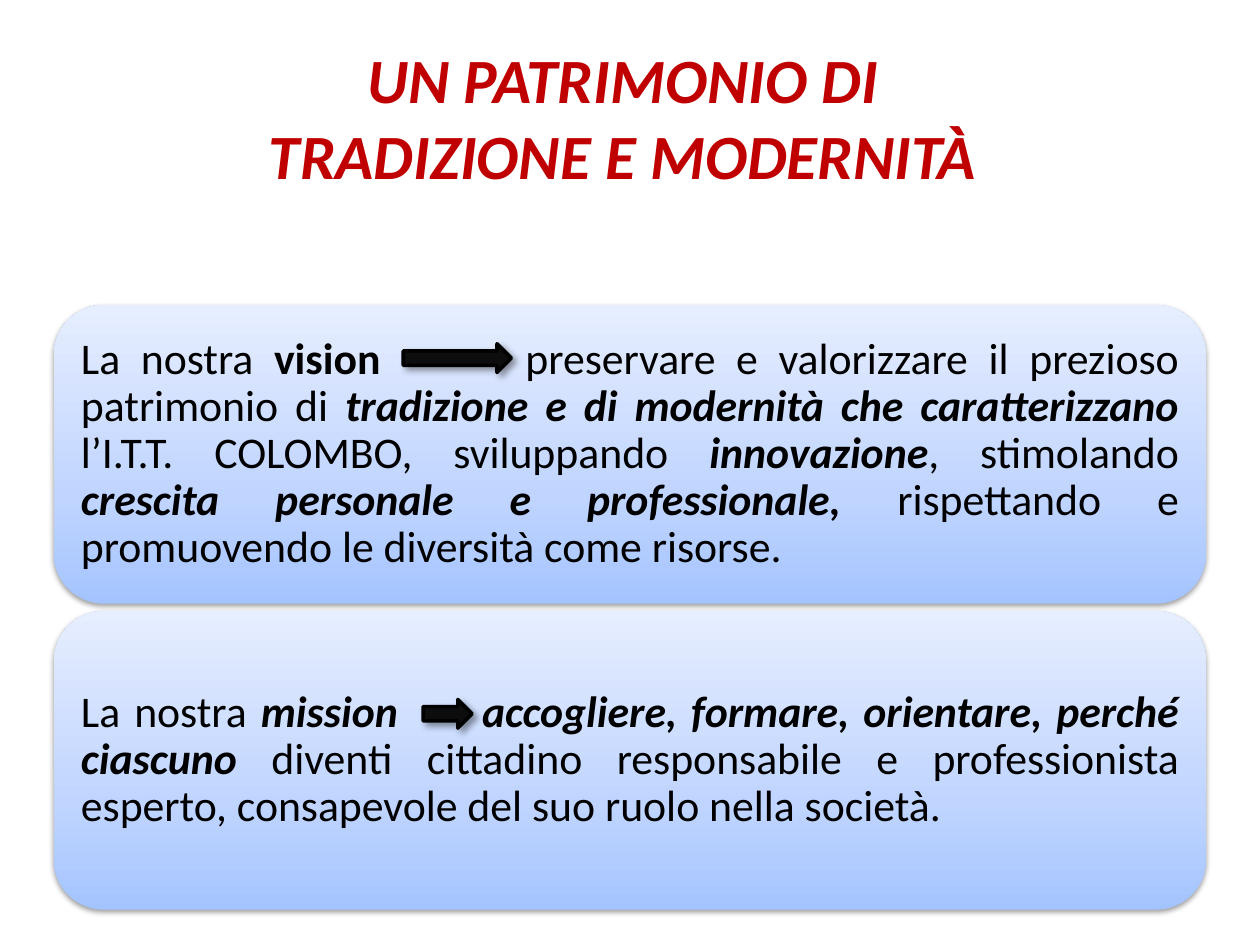
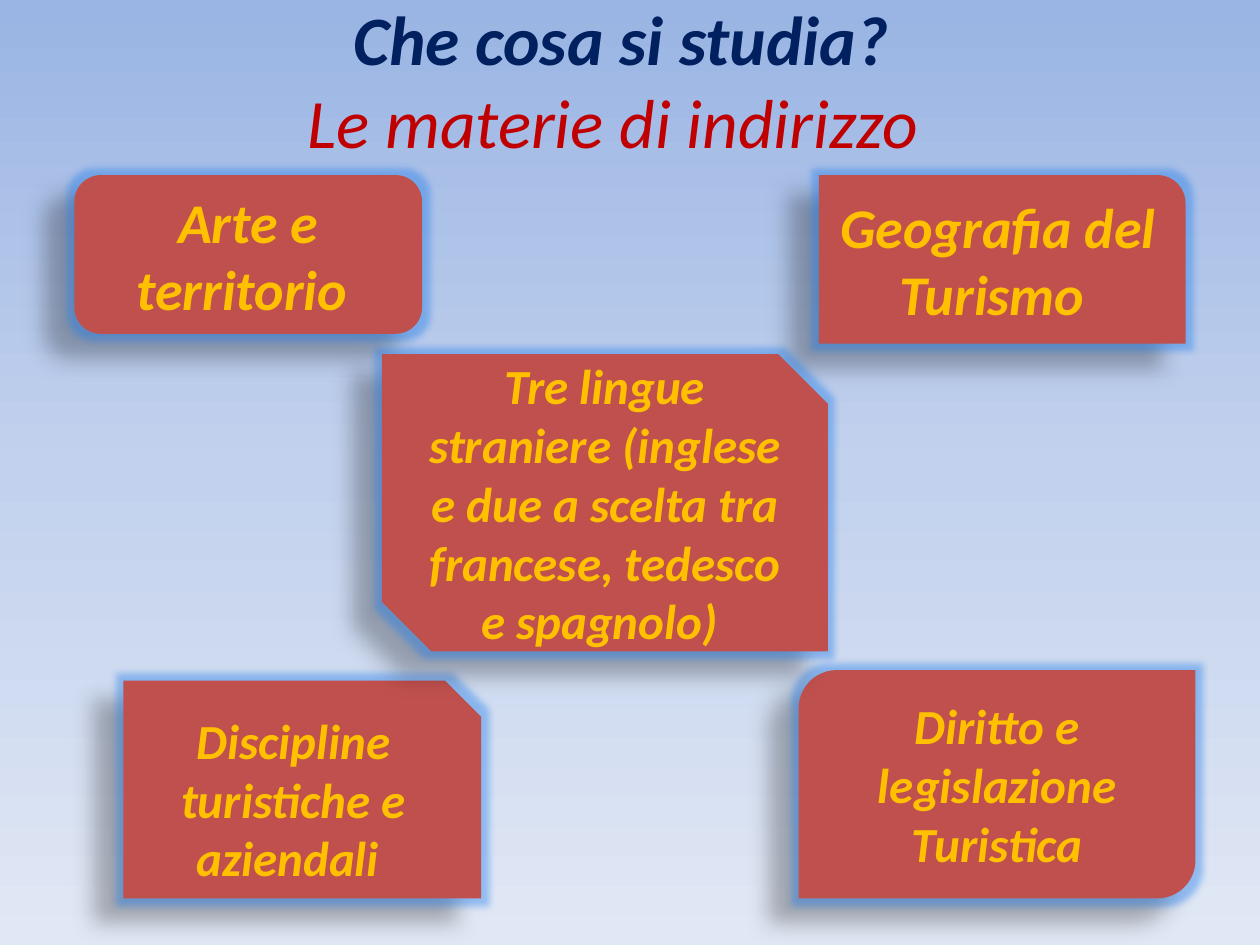
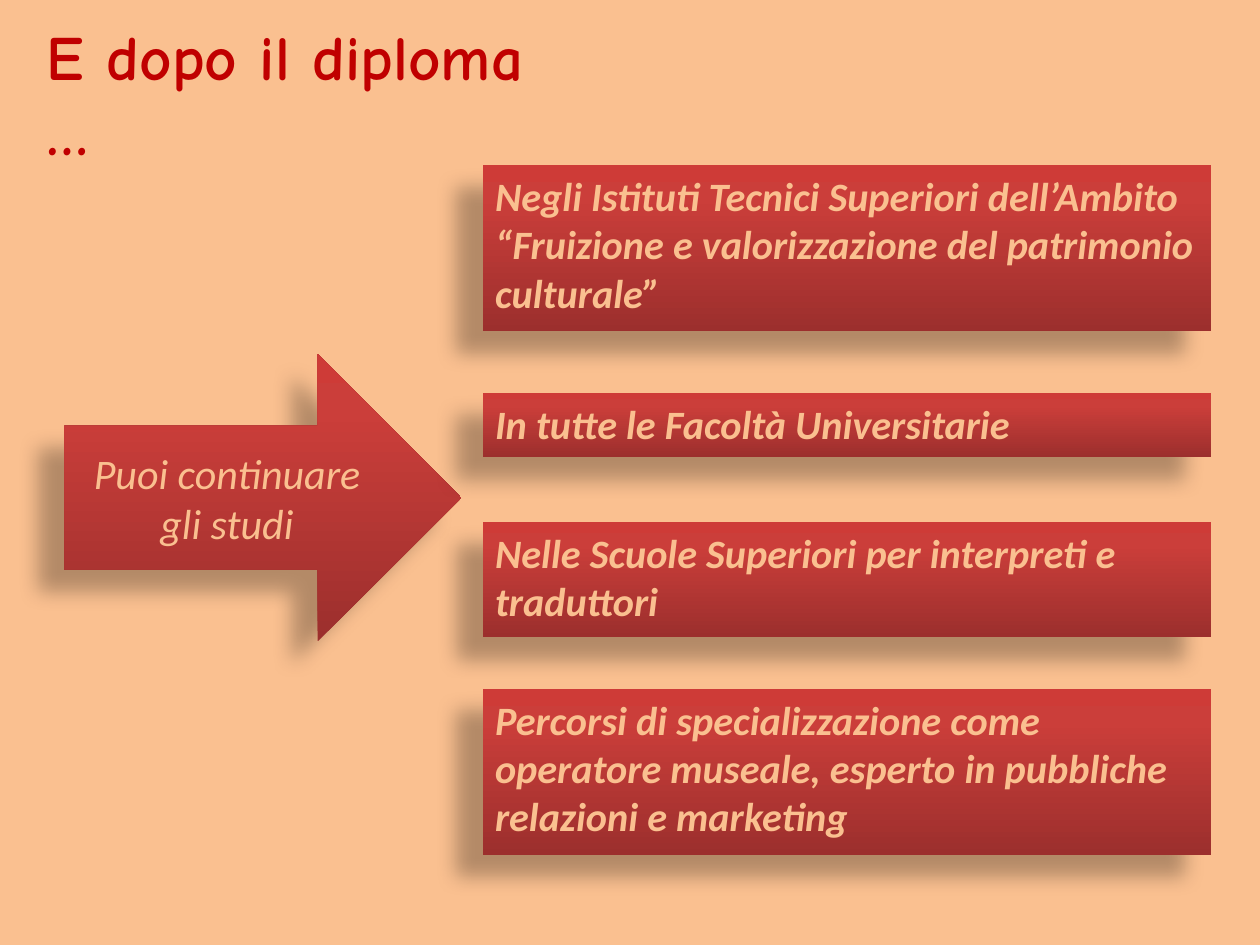
from copy import deepcopy
from lxml.etree import SubElement as Sub
from pptx import Presentation
from pptx.dml.color import RGBColor
from pptx.enum.shapes import MSO_SHAPE as Geo
from pptx.enum.text import MSO_ANCHOR as Anchor, MSO_AUTO_SIZE as Auto, PP_ALIGN as Align
from pptx.oxml.ns import qn
from pptx.util import Cm, Pt

BLACK = RGBColor(0x00, 0x00, 0x00)
INK = RGBColor(0x0D, 0x0D, 0x0D)
RED = RGBColor(0xC0, 0x00, 0x00)
NAVY = RGBColor(0x00, 0x20, 0x60)
BRICK = RGBColor(0xC0, 0x50, 0x4D)
GOLD = RGBColor(0xFF, 0xC0, 0x00)
PEACH = RGBColor(0xFA, 0xC0, 0x90)
AZURE = RGBColor(0x1F, 0x7C, 0xEB)

SKY = [(0, RGBColor(0x9A, 0xB5, 0xE4)), (0.5, RGBColor(0xC2, 0xD1, 0xED)),
       (1, RGBColor(0xE1, 0xE8, 0xF5))]
ICE = [(0, RGBColor(0xA4, 0xC4, 0xFF)), (0.35, RGBColor(0xBF, 0xD4, 0xFF)),
       (1, RGBColor(0xE6, 0xEE, 0xFF))]
RUBY = [(0, RGBColor(0x9C, 0x2F, 0x2D)), (0.8, RGBColor(0xCB, 0x3E, 0x3A)),
        (1, RGBColor(0xCE, 0x3B, 0x37))]

SOFT = (38, 3.1, 1.6, 90)
NEAR = (40, 4, 3, 45)
DEEP = (28, 11.8, 19.7, 141)

PLAIN = {"bold": False, "italic": False}
BOLD = {"bold": True, "italic": False}
SLANT = {"bold": False, "italic": True}
BOTH = {"bold": True, "italic": True}


def style(item, fmt):
    for key, value in fmt.items():
        setattr(item, key, value)


def blend(fill, root, stops, angle):
    fill.gradient()
    fill.gradient_angle = angle
    chain = next(root.iter(qn("a:gsLst")))
    chain.insert(1, deepcopy(chain[0]))
    for stop, (place, tone) in zip(fill.gradient_stops, stops):
        stop.position = place
        stop.color.rgb = tone


def tint(node, tone, alpha):
    color = Sub(node, qn("a:srgbClr"), val=str(tone))
    Sub(color, qn("a:alpha"), val=str(alpha * 1000))


def cast(shape, shade, glow):
    shape.shadow.inherit = False
    effects = shape.element.spPr.find(qn("a:effectLst"))
    if glow:
        tint(Sub(effects, qn("a:glow"), rad=str(Pt(glow))), AZURE, 40)
    alpha, blur, dist, turn = shade
    outer = Sub(effects, qn("a:outerShdw"), blurRad=str(Pt(blur)), dist=str(Pt(dist)),
                dir=str(turn * 60000), algn="ctr", rotWithShape="0")
    tint(outer, BLACK, alpha)


def write(shape, lines, size, tone, face="Calibri", align=Align.CENTER, **frame):
    style(shape.text_frame, {"word_wrap": True, "vertical_anchor": Anchor.MIDDLE,
                             "auto_size": Auto.NONE, **frame})
    para = shape.text_frame.paragraphs[0]
    para.alignment = align
    for row, line in enumerate(lines):
        if row:
            para.add_line_break()
        for text, fmt, *extra in line:
            run = para.add_run()
            run.text = text
            style(run.font, {"name": face, "size": Pt(size), **fmt})
            run.font.color.rgb = tone
            for item in extra:
                if isinstance(item, RGBColor):
                    run.font.color.rgb = item
                else:
                    run._r.get_or_add_rPr().set("spc", str(item * 100))
    return para


def draw(slide, kind, box, fill, shade, glow=0):
    shape = slide.shapes.add_shape(kind, *map(Cm, box))
    if isinstance(fill, list):
        blend(shape.fill, shape.element, fill, 90)
    else:
        shape.fill.solid()
        shape.fill.fore_color.rgb = fill
    shape.line.fill.background()
    cast(shape, shade, glow)
    return shape


def head(slide, box, lines, size, **look):
    title = slide.shapes.title
    style(title, dict(zip(("left", "top", "width", "height"), map(Cm, box))))
    write(title, lines, size, RED, **look)


def panel(slide, box, runs, mark):
    left, top = box[:2]
    edge = Cm(0.25)
    shape = draw(slide, Geo.ROUNDED_RECTANGLE, box, ICE, SOFT)
    para = write(shape, [runs], 25, BLACK, align=Align.JUSTIFY, margin_left=edge,
                 margin_right=edge, margin_top=edge, margin_bottom=edge)
    para.line_spacing = 0.9
    right, down, width = mark
    arrow = draw(slide, Geo.RIGHT_ARROW, (left + right, top + down, width, 0.58), INK, NEAR)
    arrow.line.color.rgb = BLACK
    arrow.line.width = Pt(2)


def values(slide):
    head(slide, (1.27, 0.76, 22.86, 3.18),
         [[("UN PATRIMONIO DI ", BOTH)], [("TRADIZIONE E MODERNITÀ ", BOTH)]], 36)
    vision = [
        ("La nostra ", PLAIN), ("vision", BOLD), (" ", PLAIN, 71),
        ("preservare e valorizzare il prezioso patrimonio di ", PLAIN),
        ("tradizione e di modernità che caratterizzano ", BOTH),
        ("l’I.T.T. COLOMBO, sviluppando ", PLAIN), ("innovazione", BOTH),
        (", stimolando ", PLAIN), ("crescita personale e professionale, ", BOTH),
        ("rispettando e promuovendo le diversità come risorse.", PLAIN)]
    mission = [
        ("La nostra ", PLAIN), ("mission", BOTH), (" ", BOTH, 40),
        ("accogliere, formare, orientare, perché ciascuno", BOTH),
        (" diventi cittadino responsabile e professionista esperto, "
         "consapevole del suo ruolo nella società.", PLAIN)]
    marks = (7.04, 0.78, 2.18), (7.44, 1.78, 0.99)
    for row, (runs, mark) in enumerate(zip((vision, mission), marks)):
        panel(slide, (1.09, 6.15 + row * 6.17, 23.22, 6.02), runs, mark)


def topics(slide):
    blend(slide.background.fill, slide.element, SKY, 270)
    head(slide, (1.09, 0, 22.86, 3.18),
         [[("Che cosa si studia?", BOTH, NAVY)], [("Le materie di indirizzo ", SLANT)]], 39.6)
    cards = [
        (Geo.ROUNDED_RECTANGLE, (1.5, 3.53, 7.01, 3.2), 32, "Arte e territorio "),
        (Geo.ROUND_1_RECTANGLE, (16.51, 3.53, 7.39, 3.4), 32, "Geografia del Turismo "),
        (Geo.SNIP_1_RECTANGLE, (2.49, 13.72, 7.21, 4.39), 28,
         "Discipline turistiche e aziendali "),
        (Geo.ROUND_2_DIAG_RECTANGLE, (16.1, 13.51, 8, 4.6), 28,
         "Diritto e legislazione Turistica"),
        (Geo.SNIP_2_DIAG_RECTANGLE, (7.7, 7.14, 8.99, 5.99), 28,
         "Tre lingue straniere (inglese e due a scelta tra francese, tedesco e spagnolo) ")]
    for kind, box, size, text in cards:
        card = draw(slide, kind, box, BRICK, DEEP, 8)
        write(card, [[(text, BOTH)]], size, GOLD)


def paths(slide):
    slide.background.fill.solid()
    slide.background.fill.fore_color.rgb = PEACH
    head(slide, (0.69, 1.17, 11.4, 1.4), [[("E dopo il diploma …", BOLD)]], 36,
         face="Comic Neue", align=Align.LEFT)
    arrow = draw(slide, Geo.RIGHT_ARROW, (1.3, 7.14, 8, 5.79), RUBY, DEEP)
    write(arrow, [[("Puoi continuare gli studi", SLANT)]], 24, PEACH)
    routes = [
        (3.33, 3, "Negli Istituti Tecnici Superiori dell’Ambito "
                  "“Fruizione e valorizzazione del patrimonio culturale”"),
        (7.92, 1, "In tutte le Facoltà Universitarie"),
        (10.52, 2, "Nelle Scuole Superiori per interpreti e traduttori"),
        (13.89, 3, "Percorsi di specializzazione come operatore museale, "
                   "esperto in pubbliche relazioni e marketing")]
    for top, rows, text in routes:
        route = draw(slide, Geo.RECTANGLE, (9.73, top, 14.68, 0.28 + rows * 1.02), RUBY, DEEP)
        write(route, [[(text, BOTH)]], 23, PEACH, align=Align.LEFT,
              vertical_anchor=Anchor.TOP, auto_size=Auto.SHAPE_TO_FIT_TEXT)


def main():
    deck = Presentation()
    style(deck, {"slide_width": Cm(25.4), "slide_height": Cm(19.05)})
    for build in (values, topics, paths):
        build(deck.slides.add_slide(deck.slide_layouts[5]))
    deck.save("out.pptx")


if __name__ == "__main__":
    main()
